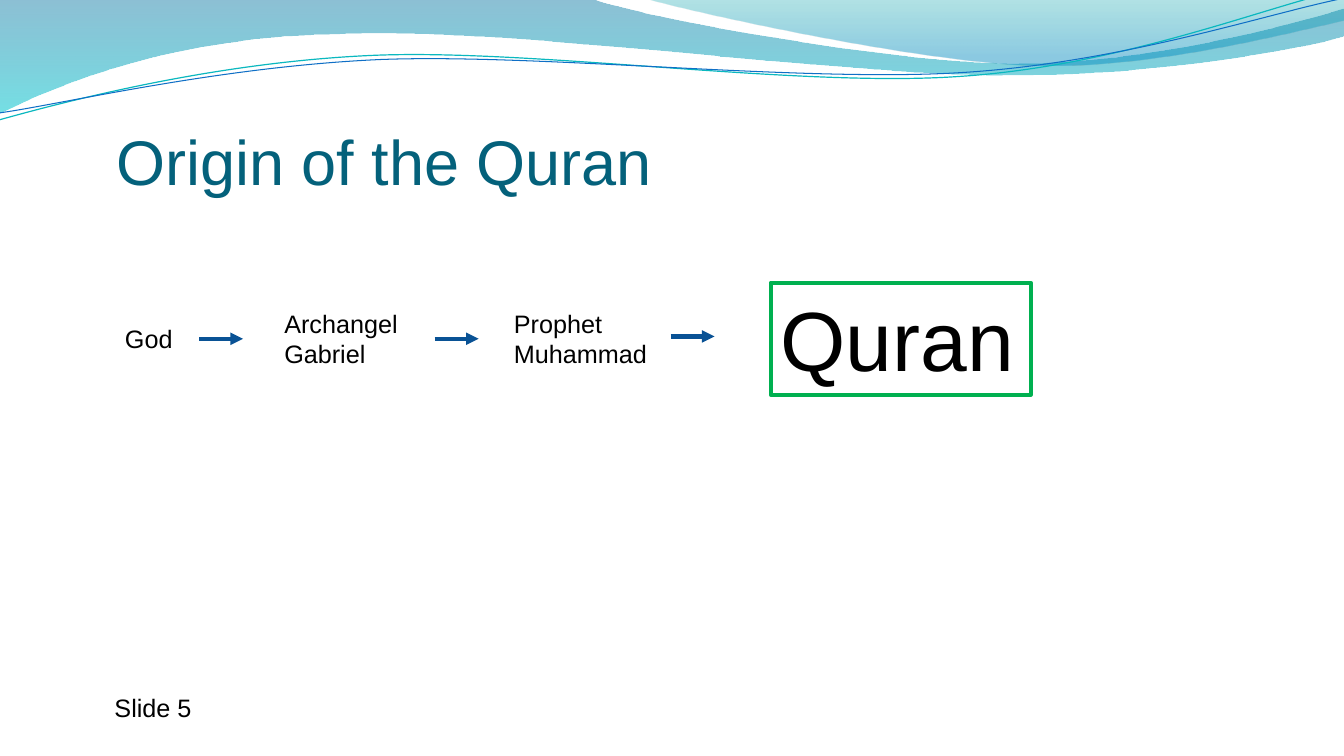
"""Builds the slide on the origin of the Quran."""
import math

from lxml import etree
from pptx import Presentation, util as u
from pptx.dml.color import RGBColor
from pptx.enum import shapes, text
from pptx.oxml import ns

FONT = "Arial"
TITLE_BLUE = RGBColor(0x04, 0x61, 0x7B)
BLACK = RGBColor(0, 0, 0)
FRAME_GREEN = RGBColor(0, 0xB0, 0x50)
ARROW_BLUE = RGBColor(0x09, 0x52, 0x95)
DEEP_BLUE = RGBColor(0, 0x74, 0xA1)
AQUA = RGBColor(0, 0xC6, 0xCF)
TEAL = RGBColor(0, 0xA1, 0xA9)
SKY = RGBColor(0, 0x8B, 0xBF)
LINE_TEAL = RGBColor(0x0A, 0xB8, 0xBF)
LINE_BLUE = RGBColor(0x0F, 0x6F, 0xC6)

BANDS = [
    ([[(0, 0)], [(422.6, -0.7)],
      [(456.5, 12.2), (637.2, 45.4), (727.9, 45.4)],
      [(819.4, 45.4), (920.2, 18.7), (959.8, 6.5)],
      [(961.2, 25.9)],
      [(943.9, 31.7), (835.2, 54.7), (715.7, 54)],
      [(596.9, 54), (366.5, 20.2), (247, 24.5)],
      [(123.8, 25.9), (43.9, 59.8), (-0.7, 81.4)]],
     [(0, DEEP_BLUE, 45), (1, AQUA, 55)]),
    ([[(460.1, -0.7)],
      [(488.9, 7.9), (654.5, 44.6), (738, 46.8)],
      [(821.5, 49.7), (923, 23), (959.8, 15.1)],
      [(959.8, 0)]],
     [(0, TEAL, 30), (0.8, SKY, 45)]),
]
RIPPLES = [
    ([[(-0.7, 85.7)],
      [(46.1, 72.7), (151.9, 44.6), (265.7, 39.6)],
      [(379.4, 34.6), (568.8, 62.6), (684, 54.7)],
      [(799.2, 47.5), (901.4, 5.8), (958.3, -7.2)]],
     (478.8, 41.4), LINE_TEAL, 0.85),
    ([[(0, 80.6)],
      [(45.4, 74.2), (157, 47.5), (272.2, 42.5)],
      [(386.6, 38.2), (573.1, 59), (687.6, 51.8)],
      [(802.8, 44.6), (903.6, 10.1), (960.5, -1.4)]],
     (480.2, 42.5), LINE_BLUE, 0.75),
]
RIPPLE_TILT = 2.7
TITLE = ("Origin of the Quran", (83.2, 88.2, 480.2, 53.3))
LABELS = [
    ("God", (82.2, 227.5, 59.8, 28.8)),
    ("Archangel Gabriel", (196, 216.8, 98.6, 51.1)),
    ("Prophet Muhammad", (360, 216.8, 139, 51.1)),
    ("Slide 5", (74.7, 491, 85, 28.8)),
]
RESULT = ("Quran", (550.5, 202, 185.8, 79.9))
ARROWS = [(142.2, 242), (310.5, 242), (479, 240.3)]
ARROW_LENGTH = 31.4


def level(outline, centre):
    """Turn an outline about its centre so that the tilt is taken out."""
    cos, sin = math.cos(math.radians(RIPPLE_TILT)), math.sin(math.radians(RIPPLE_TILT))
    cx, cy = centre
    return [[(cx + (x - cx) * cos - (y - cy) * sin, cy + (x - cx) * sin + (y - cy) * cos)
             for x, y in step] for step in outline]


def add_wave(slide, outline, close):
    """Draw a freeform in which steps of three points are cubic curves."""
    points = [(u.Pt(x), u.Pt(y)) for step in outline for x, y in step]
    builder = slide.shapes.build_freeform(*points[0])
    builder.add_line_segments(points[1:], close=close)
    wave = builder.convert_to_shape()
    wave.shadow.inherit = False
    segments = iter(list(wave._element.iter(ns.qn("a:lnTo"))))
    for step in outline[1:]:
        legs = [next(segments) for _ in step]
        if len(legs) == 3:
            legs[0].tag = ns.qn("a:cubicBezTo")
            for leg in legs[1:]:
                legs[0].append(leg[0])
                leg.getparent().remove(leg)
    return wave


def fill_gradient(wave, stops):
    """Fill a wave from top to bottom with translucent colours."""
    wave.line.fill.background()
    wave.fill.gradient()
    wave.fill.gradient_angle = 270
    for stop, (position, colour, _) in zip(wave.fill.gradient_stops, stops):
        stop.position = position
        stop.color.rgb = colour
    colours = wave._element.spPr.iter(ns.qn("a:srgbClr"))
    for colour, (_, _, opacity) in zip(list(colours), stops):
        etree.SubElement(colour, ns.qn("a:alpha"), val=str(opacity * 1000))


def write(shape, words, size, colour):
    """Put left-aligned words into a shape."""
    frame = shape.text_frame
    frame.text = words
    frame.word_wrap = True
    paragraph = frame.paragraphs[0]
    paragraph.alignment = text.PP_ALIGN.LEFT
    font = paragraph.runs[0].font
    font.name, font.size, font.color.rgb = FONT, u.Pt(size), colour


def add_arrow(slide, x, y):
    """Draw one arrow pointing right."""
    arrow = slide.shapes.add_connector(
        shapes.MSO_CONNECTOR.STRAIGHT, u.Pt(x), u.Pt(y), u.Pt(x + ARROW_LENGTH), u.Pt(y))
    arrow.line.color.rgb = ARROW_BLUE
    arrow.line.width = u.Pt(3)
    etree.SubElement(arrow.line._get_or_add_ln(), ns.qn("a:tailEnd"), type="triangle")
    etree.SubElement(arrow._element.spPr, ns.qn("a:effectLst"))


def main():
    """Build and save the slide."""
    deck = Presentation()
    deck.slide_width, deck.slide_height = u.Pt(960), u.Pt(540)
    slide = deck.slides.add_slide(deck.slide_layouts[6])

    for outline, stops in BANDS:
        fill_gradient(add_wave(slide, outline, True), stops)
    for outline, centre, colour, width in RIPPLES:
        ripple = add_wave(slide, level(outline, centre), False)
        ripple.rotation = -RIPPLE_TILT
        ripple.fill.background()
        ripple.line.color.rgb = colour
        ripple.line.width = u.Pt(width)

    words, box = TITLE
    title = slide.shapes.add_textbox(*map(u.Pt, box))
    write(title, words, 45, TITLE_BLUE)
    frame = title.text_frame
    frame.vertical_anchor = text.MSO_ANCHOR.BOTTOM
    frame.margin_left = frame.margin_right = frame.margin_bottom = 0

    words, box = RESULT
    result = slide.shapes.add_shape(shapes.MSO_SHAPE.RECTANGLE, *map(u.Pt, box))
    result.shadow.inherit = False
    result.fill.background()
    result.line.color.rgb = FRAME_GREEN
    result.line.width = u.Pt(3)
    write(result, words, 60, BLACK)
    result.text_frame.vertical_anchor = text.MSO_ANCHOR.TOP

    for words, box in LABELS:
        write(slide.shapes.add_textbox(*map(u.Pt, box)), words, 18, BLACK)
    for x, y in ARROWS:
        add_arrow(slide, x, y)
    deck.save("out.pptx")


if __name__ == "__main__":
    main()
